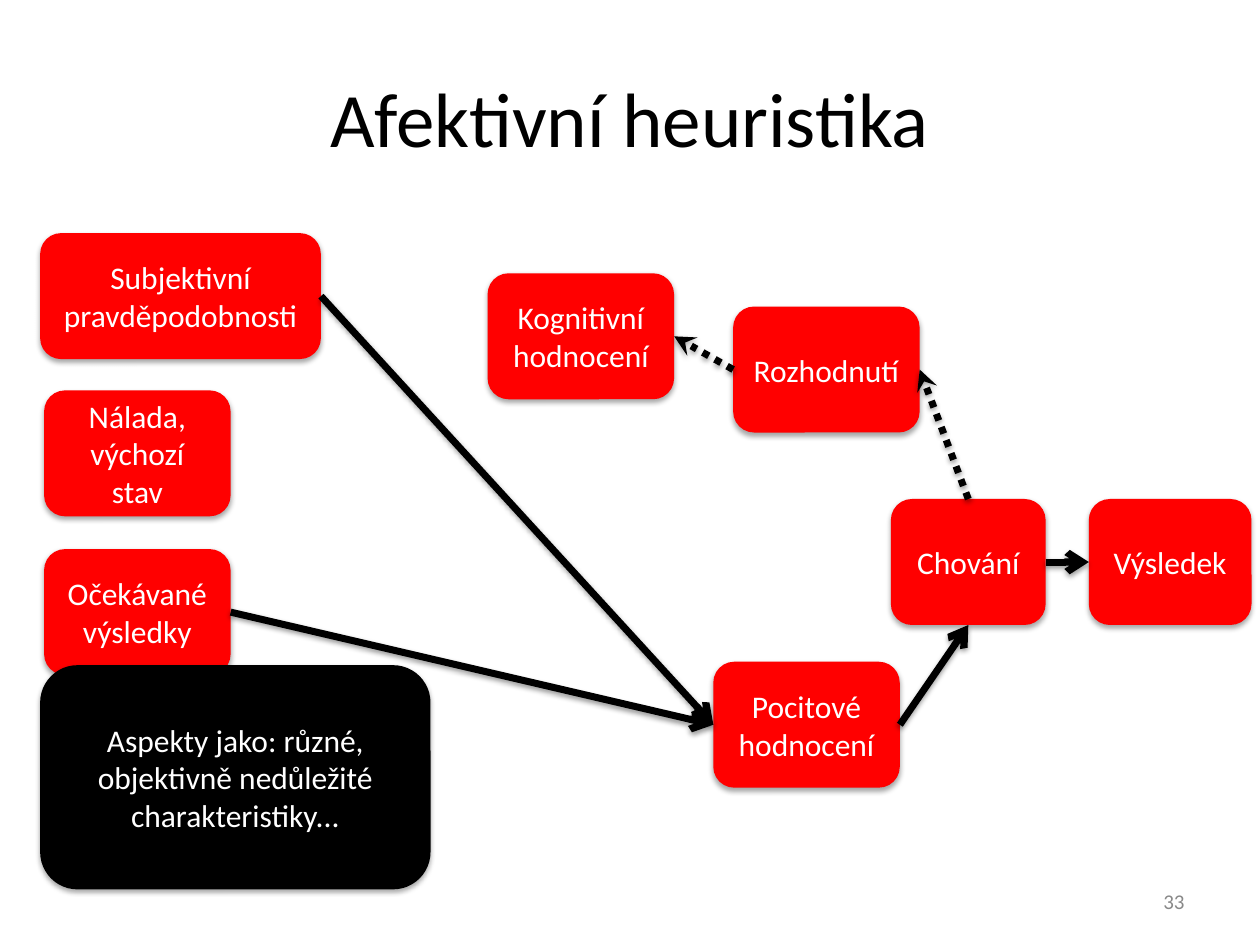
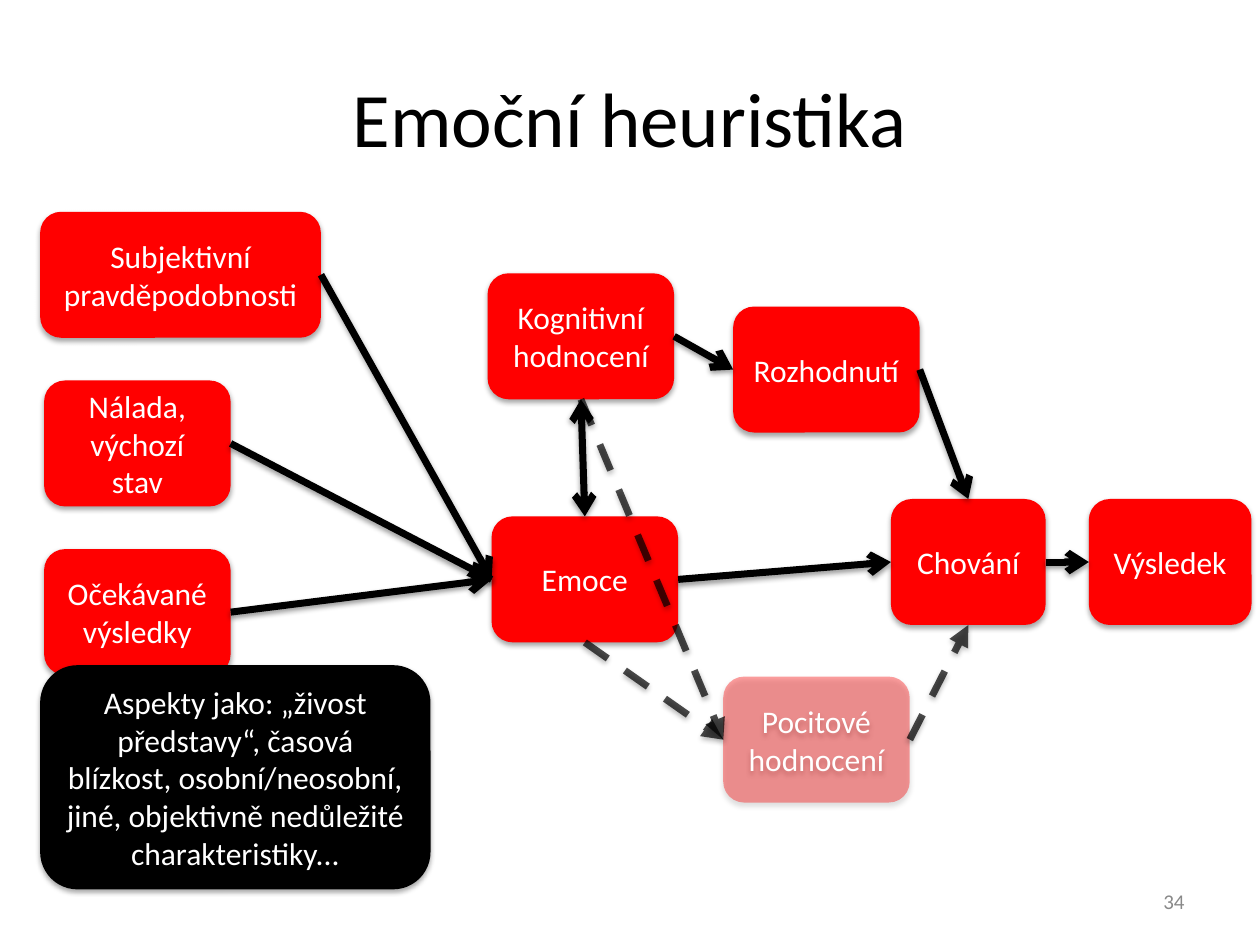
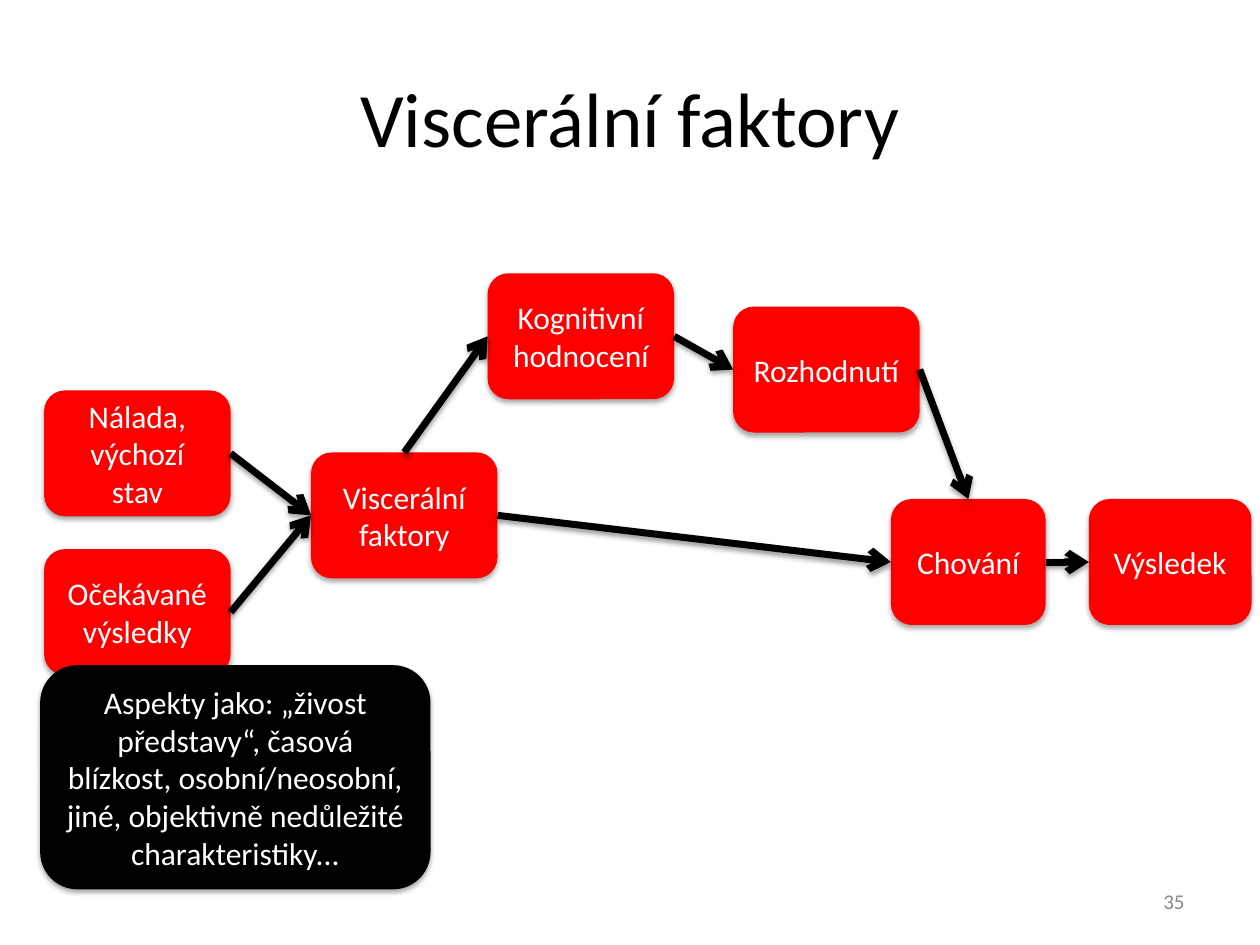
"""Build three slides of flow diagrams about affect and decisions."""
from lxml.etree import SubElement
from pptx import Presentation
from pptx.dml.color import RGBColor
from pptx.enum.shapes import MSO_CONNECTOR as Link, MSO_SHAPE as Shape
from pptx.enum.text import MSO_ANCHOR as Anchor, PP_ALIGN as Align
from pptx.oxml.ns import qn
from pptx.util import Cm, Pt

FONT = "Calibri"
RED, BLACK, WHITE, GREY = "FF0000", "000000", "FFFFFF", "898989"
TALL, WIDE = 2.54, 3.76
TOP, LEFT, DOWN, RIGHT = range(4)
FIRST = 33

TITLE = (1.27, 0.76, 22.86, 3.18)
NUMBER = (18.21, 17.65, 5.92, 1.02)
NOTE = (0.81, 13.41, 7.87, 4.52)

# name: (text, width)
BOXES = {
    "choice": ("Rozhodnutí", WIDE),
    "result": ("Výsledek", 3.28),
    "action": ("Chování", 3.12),
    "thought": ("Kognitivní hodnocení", WIDE),
    "hope": ("Očekávané výsledky", WIDE),
    "odds": ("Subjektivní pravděpodobnosti", 5.66),
    "mood": ("Nálada, výchozí stav", WIDE),
    "feeling": ("Pocitové hodnocení", WIDE),
    "emotion": ("Emoce", WIDE),
    "visceral": ("Viscerální faktory", WIDE),
}
SHARED = {
    "choice": (14.78, 6.18),
    "result": (21.95, 10.06),
    "action": (17.96, 10.06),
    "thought": (9.83, 5.51),
    "hope": (0.89, 11.07),
}

# kind: (dash, opacity, head, tail)
KINDS = {
    "solid": ("solid", 100, "none", "arrow"),
    "plain": ("solid", 100, "none", "none"),
    "both": ("solid", 100, "arrow", "arrow"),
    "dots": ("sysDot", 100, "none", "stealth"),
    "faint": ("dash", 69, "none", "triangle"),
}
FINAL = ("action", RIGHT, "result", LEFT, "solid")
PATH = [
    ("thought", RIGHT, "choice", LEFT, "solid"),
    ("choice", RIGHT, "action", TOP, "solid"),
    FINAL,
]
VIVID = ("Aspekty jako: „živost představy“, časová blízkost, osobní/neosobní, "
         "jiné, objektivně nedůležité charakteristiky...")

SLIDES = [
    {
        "title": "Afektivní heuristika",
        "note": "Aspekty jako: různé, objektivně nedůležité charakteristiky...",
        "boxes": {"odds": (0.81, 4.7), "mood": (0.89, 7.87),
                  "feeling": (14.38, 13.34)},
        "lines": [
            ("odds", RIGHT, "feeling", LEFT, "solid"),
            ("action", TOP, "choice", RIGHT, "dots"),
            FINAL,
            ("hope", RIGHT, "feeling", LEFT, "solid"),
            ("feeling", RIGHT, "action", DOWN, "solid"),
            ("choice", LEFT, "thought", RIGHT, "dots"),
        ],
    },
    {
        "title": "Emoční heuristika",
        "note": VIVID,
        "boxes": {"odds": (0.81, 4.27), "mood": (0.89, 7.67),
                  "emotion": (9.91, 10.41), "feeling": (14.58, 13.64)},
        "faded": "feeling",
        "lines": [
            ("odds", RIGHT, "emotion", LEFT, "solid"),
            *PATH,
            ("thought", DOWN, "emotion", TOP, "both"),
            ("mood", RIGHT, "emotion", LEFT, "plain"),
            ("hope", RIGHT, "emotion", LEFT, "solid"),
            ("emotion", RIGHT, "action", LEFT, "solid"),
            ("emotion", DOWN, "feeling", LEFT, "faint"),
            ("feeling", RIGHT, "action", DOWN, "faint"),
            ("thought", DOWN, "feeling", LEFT, "faint"),
        ],
    },
    {
        "title": "Viscerální faktory",
        "note": VIVID,
        "boxes": {"mood": (0.89, 7.87), "visceral": (6.27, 9.12)},
        "lines": [
            *PATH,
            ("mood", RIGHT, "visceral", LEFT, "solid"),
            ("hope", RIGHT, "visceral", LEFT, "solid"),
            ("visceral", TOP, "thought", LEFT, "solid"),
            ("visceral", RIGHT, "action", LEFT, "solid"),
        ],
    },
]


def paint(fill, color, alpha=100):
    fill.solid()
    fill.fore_color.rgb = RGBColor.from_string(color)
    if alpha < 100:
        node(fill_node(fill), "alpha", val=alpha * 1000)


def fill_node(fill):
    return fill._xPr.find(".//" + qn("a:srgbClr"))


def node(parent, tag, **attrs):
    texts = {key: str(val) for key, val in attrs.items()}
    return SubElement(parent, qn("a:" + tag), texts)


def shade(part, alpha, dist):
    effects = node(part._element.spPr, "effectLst")
    shadow = node(effects, "outerShdw", blurRad=Pt(3.1), dist=Pt(dist),
                  dir=5400000, rotWithShape=0)
    color = node(shadow, "srgbClr", val=BLACK)
    node(color, "alpha", val=alpha * 1000)


def write(part, text, size, color, align):
    frame = part.text_frame
    frame.word_wrap = True
    frame.vertical_anchor = Anchor.MIDDLE
    para = frame.paragraphs[0]
    para.alignment = align
    run = para.add_run()
    run.text = text
    run.font.name = FONT
    run.font.size = Pt(size)
    run.font.color.rgb = RGBColor.from_string(color)


def label(slide, place, *style):
    write(slide.shapes.add_textbox(*map(Cm, place)), *style)


def add_box(slide, place, text, color, alpha=100):
    box = slide.shapes.add_shape(Shape.ROUNDED_RECTANGLE, *map(Cm, place))
    paint(box.fill, color, alpha)
    box.line.fill.background()
    shade(box, 35, 1.8)
    write(box, text, 18, WHITE, Align.CENTER)
    return box


def add_line(slide, start, out, end, into, kind):
    dash, alpha, head, tail = KINDS[kind]
    line = slide.shapes.add_connector(Link.STRAIGHT, 0, 0, 0, 0)
    line.begin_connect(start, out)
    line.end_connect(end, into)
    line.line.width = Pt(4)
    paint(line.line.fill, BLACK, alpha)
    stroke = line.line._get_or_add_ln()
    node(stroke, "prstDash", val=dash)
    node(stroke, "headEnd", type=head)
    node(stroke, "tailEnd", type=tail)
    shade(line, 38, 1.6)


def build(deck, number, data):
    slide = deck.slides.add_slide(deck.slide_layouts[6])
    label(slide, TITLE, data["title"], 44, BLACK, Align.CENTER)
    label(slide, NUMBER, str(number), 12, GREY, Align.RIGHT)
    boxes = {}
    for name, (left, top) in {**SHARED, **data["boxes"]}.items():
        text, width = BOXES[name]
        alpha = 37 if name == data.get("faded") else 100
        boxes[name] = add_box(slide, (left, top, width, TALL), text, RED, alpha)
    add_box(slide, NOTE, data["note"], BLACK)
    for start, out, end, into, kind in data["lines"]:
        add_line(slide, boxes[start], out, boxes[end], into, kind)


def main():
    deck = Presentation()
    deck.slide_width, deck.slide_height = Cm(25.4), Cm(19.05)
    for number, data in enumerate(SLIDES, FIRST):
        build(deck, number, data)
    deck.save("out.pptx")


if __name__ == "__main__":
    main()
